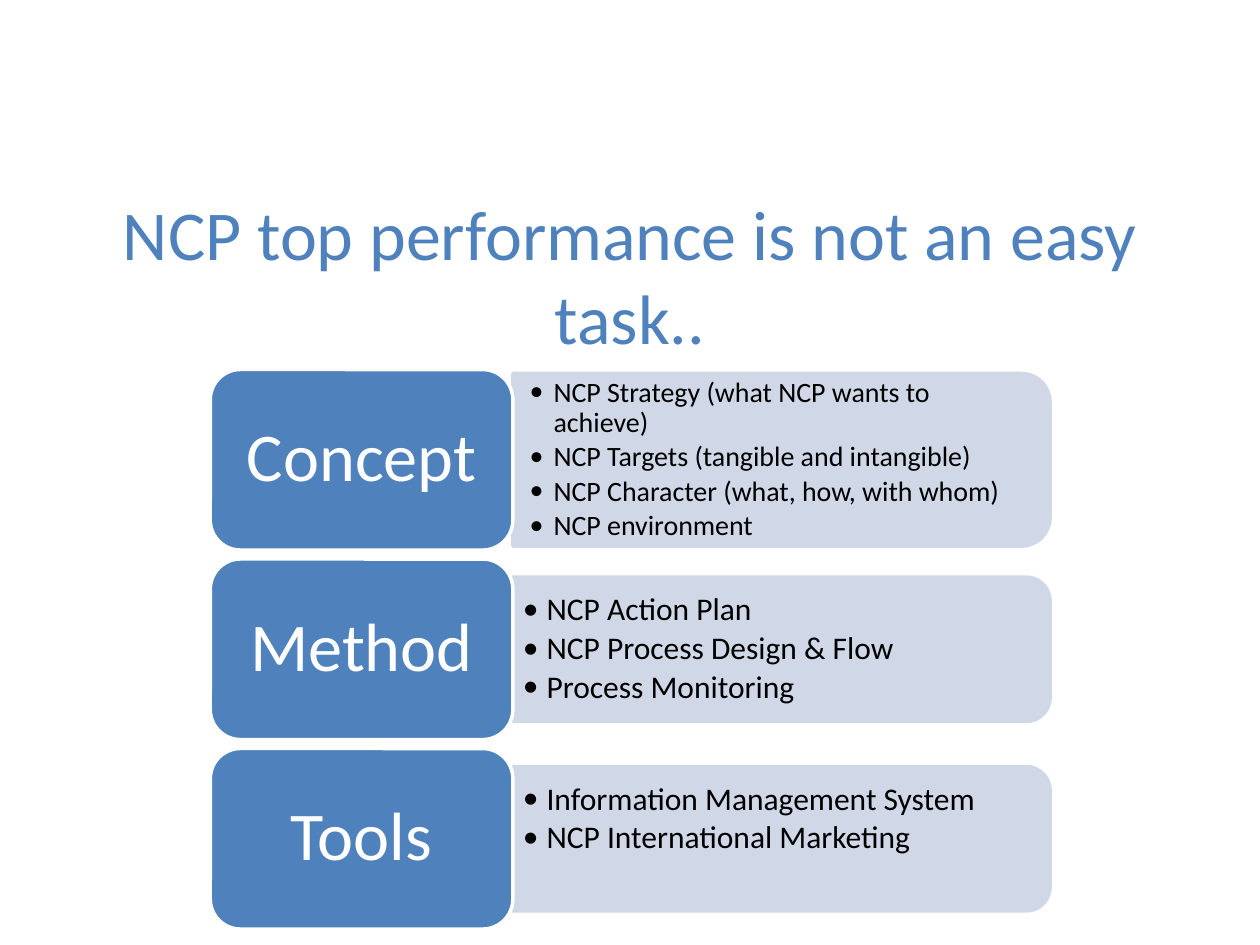
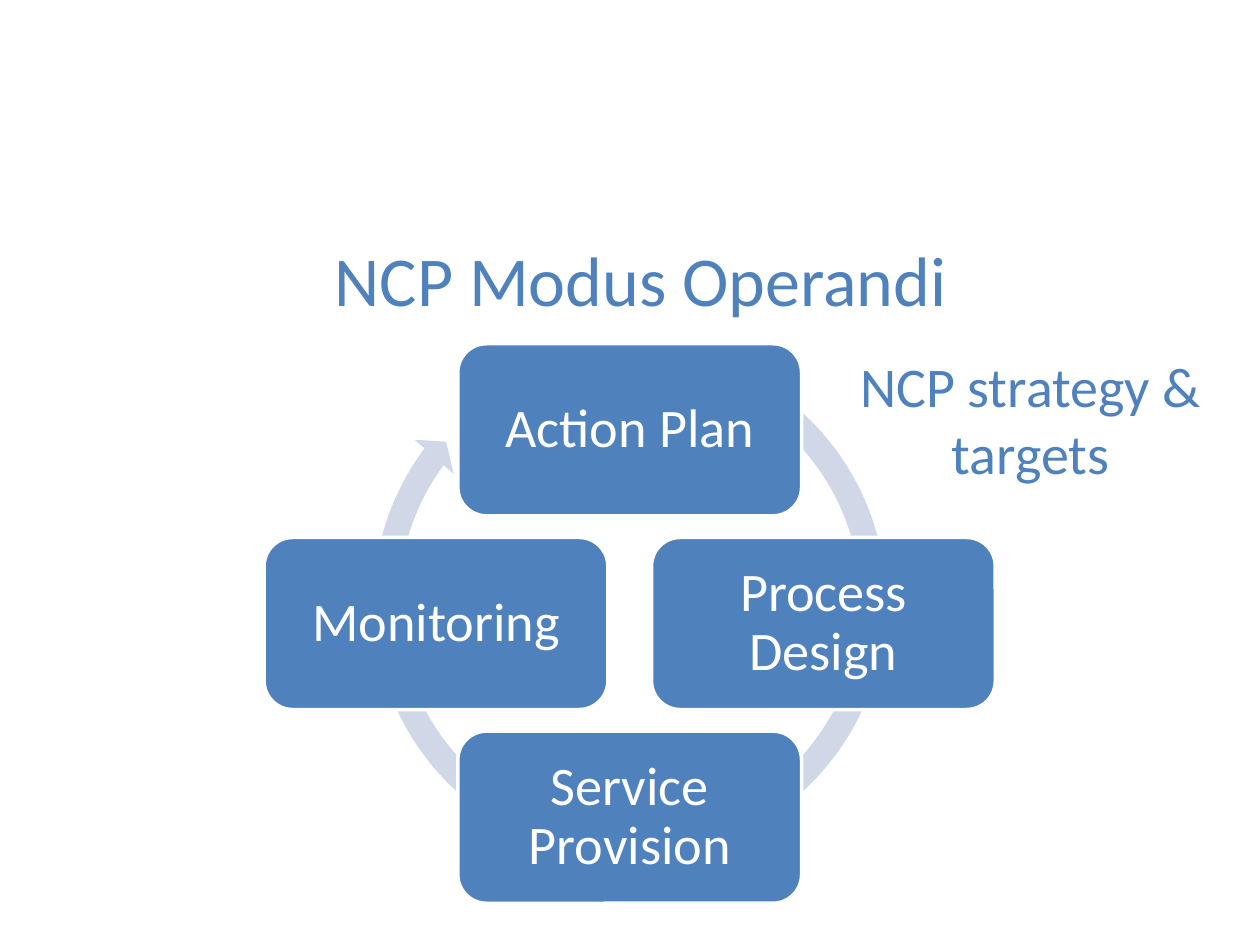
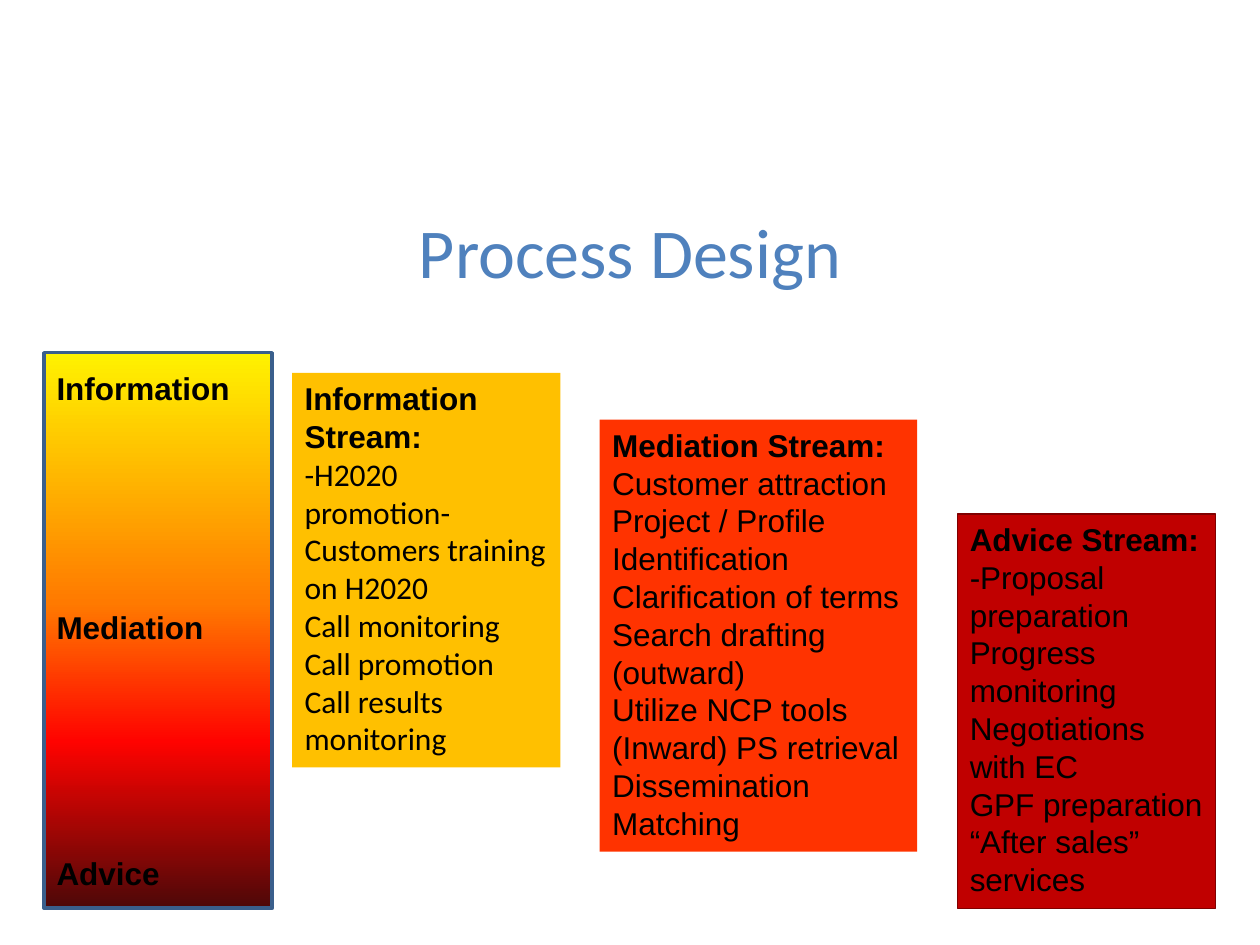
from math import cos, radians, sin

from lxml.etree import SubElement
from pptx import Presentation
from pptx.dml.color import RGBColor
from pptx.enum.shapes import MSO_SHAPE
from pptx.enum.text import MSO_ANCHOR, PP_ALIGN
from pptx.oxml.ns import qn
from pptx.util import Cm, Pt

BLUE, PALE_BLUE, WHITE, BLACK = "4F81BD", "D0D8E8", "FFFFFF", "000000"
BODY_FONT, STREAM_FONT = "Calibri", "Arial"
CORNER = 1 / 6  # corner radius as a share of the height


def rgb(hex_colour):
    return RGBColor.from_string(hex_colour)


def style_shape(shape, fill=None, line=None, line_width=2):
    shape.shadow.inherit = False
    if fill:
        shape.fill.solid()
        shape.fill.fore_color.rgb = rgb(fill)
    if line:
        shape.line.color.rgb = rgb(line)
        shape.line.width = Pt(line_width)
    else:
        shape.line.fill.background()


def set_insets(frame, left, top, right, bottom):
    frame.margin_left, frame.margin_top = Cm(left), Cm(top)
    frame.margin_right, frame.margin_bottom = Cm(right), Cm(bottom)


def style_font(font, size, colour, name=BODY_FONT, bold=False):
    font.name, font.size, font.bold = name, Pt(size), bold
    font.color.rgb = rgb(colour)


def write(shape, text, size, colour, name=BODY_FONT, bold=False,
          align=PP_ALIGN.LEFT, anchor=MSO_ANCHOR.MIDDLE):
    frame = shape.text_frame
    frame.word_wrap = True
    frame.vertical_anchor = anchor
    frame.text = text
    for paragraph in frame.paragraphs:
        paragraph.alignment = align
        for run in paragraph.runs:
            style_font(run.font, size, colour, name, bold)
    return frame


def add_heading(slide, text, box, size=40):
    heading = slide.shapes.add_textbox(*map(Cm, box))
    write(heading, text, size, BLUE, align=PP_ALIGN.CENTER)


def add_blue_box(slide, text, box, size, insets):
    blue_box = slide.shapes.add_shape(MSO_SHAPE.ROUNDED_RECTANGLE, *map(Cm, box))
    blue_box.adjustments[0] = CORNER
    style_shape(blue_box, BLUE, WHITE)
    frame = write(blue_box, text, size, WHITE, align=PP_ALIGN.CENTER)
    set_insets(frame, *insets)
    for paragraph in frame.paragraphs:
        paragraph.line_spacing = 0.9


# Concept, method and tools rows
def add_bullet_panel(slide, bullets, box, size, insets):
    left, top, width, height = box
    radius = height * CORNER
    right, bottom = left + width, top + height

    # Square left side, rounded right side
    outline = [(left, top)]
    for centre_y, first_angle in ((top + radius, -90), (bottom - radius, 0)):
        for step in range(0, 91, 6):
            angle = radians(first_angle + step)
            outline.append((right - radius + radius * cos(angle),
                            centre_y + radius * sin(angle)))
    outline.append((left, bottom))
    points = [(Cm(x), Cm(y)) for x, y in outline]
    builder = slide.shapes.build_freeform(*points[0])
    builder.add_line_segments(points[1:], close=True)
    panel = builder.convert_to_shape()
    style_shape(panel, PALE_BLUE, PALE_BLUE)

    frame = write(panel, "\n".join(bullets), size, BLACK)
    set_insets(frame, *insets)
    for paragraph in frame.paragraphs:
        paragraph.line_spacing = 0.9
        paragraph.space_after = Pt(size * 0.15)
        properties = paragraph._p.get_or_add_pPr()
        properties.set("marL", str(Cm(0.48)))
        properties.set("indent", str(-Cm(0.48)))
        SubElement(properties, qn("a:buFont"), typeface=BODY_FONT)
        SubElement(properties, qn("a:buChar"), char="•")


def add_topic_rows(slide, box, topics):
    left, top, width, height = box
    label_width, gap = 6.1, 0.18
    label_height = (height - gap * (len(topics) - 1)) / len(topics)
    for row, (label, bullets, size, panel_height, insets) in enumerate(topics):
        row_top = top + row * (label_height + gap)
        panel_top = row_top + (label_height - panel_height) / 2
        add_bullet_panel(slide, bullets,
                         (left + label_width, panel_top, width - label_width, panel_height),
                         size, insets)
        add_blue_box(slide, label, (left, row_top, label_width, label_height),
                     39, (0.25, 0.25, 0.25, 0.25))


# Cycle of steps, clockwise from the top
def add_cycle(slide, box, steps):
    left, top, width, height = box
    step_width, step_height, arrow_size = 6.93, 3.47, 10.87
    radius = (height - step_height) / 2
    centre_x, centre_y = left + width / 2, top + height / 2

    arrow = slide.shapes.add_shape(
        MSO_SHAPE.CIRCULAR_ARROW, Cm(centre_x - arrow_size / 2),
        Cm(centre_y - 0.43 - arrow_size / 2), Cm(arrow_size), Cm(arrow_size))
    band, head = 4.7 / 100, 4.8 / 100
    head_angle, end_angle, start_angle = (degrees * 0.6 for degrees in (4.55, 216.62, 298.65))
    for index, value in enumerate((band, head_angle, end_angle, start_angle, head)):
        arrow.adjustments[index] = value
    style_shape(arrow, PALE_BLUE)

    for index, step in enumerate(steps):
        angle = radians(360 * index / len(steps) - 90)
        step_left = centre_x + radius * cos(angle) - step_width / 2
        step_top = centre_y + radius * sin(angle) - step_height / 2
        add_blue_box(slide, step, (step_left, step_top, step_width, step_height),
                     31, (0.5, 0.5, 0.5, 0.5))


# Scale from information to advice
def add_service_scale(slide, box, stops, levels):
    left, top, width, height = box
    scale = slide.shapes.add_shape(MSO_SHAPE.RECTANGLE, *map(Cm, box))
    style_shape(scale, line="3A5F8C")
    scale.fill.gradient()
    scale.fill.gradient_angle = 270
    stop_list = scale._element.spPr.find(".//" + qn("a:gsLst"))
    stop_list.clear()
    for percent, colour in stops:
        stop = SubElement(stop_list, qn("a:gs"), pos=str(percent * 1000))
        SubElement(stop, qn("a:srgbClr"), val=colour)

    for level, offset in levels:
        label = slide.shapes.add_textbox(Cm(left), Cm(top + offset), Cm(width), Cm(1.02))
        write(label, level, 18, BLACK, STREAM_FONT, bold=True)


def add_stream(slide, box, heading, tasks, fill, line=None, task_font=STREAM_FONT):
    stream = slide.shapes.add_shape(MSO_SHAPE.RECTANGLE, *map(Cm, box))
    style_shape(stream, fill, line, 0.75)
    frame = write(stream, "\n".join(heading + tasks), 18, BLACK, task_font,
                  anchor=MSO_ANCHOR.TOP)
    for paragraph in frame.paragraphs[:len(heading)]:
        for run in paragraph.runs:
            style_font(run.font, 18, BLACK, STREAM_FONT, bold=True)


def build_performance(slide):
    add_heading(slide, "NCP top performance is not an easy task..", (1.27, 3.94, 22.86, 3.18))
    add_topic_rows(slide, (4.24, 7.45, 16.93, 11.28), [
        ("Concept", ["NCP Strategy (what NCP wants to achieve)",
                     "NCP Targets (tangible and intangible)",
                     "NCP Character (what, how, with whom)",
                     "NCP environment"], 16, 3.48, (0.34, 0.34, 0.51, 0.34)),
        ("Method", ["NCP Action Plan", "NCP Process Design & Flow", "Process Monitoring"],
         18, 2.91, (0.2, 0.23, 0.33, 0.23)),
        ("Tools", ["Information Management System", "NCP International Marketing"],
         18, 2.91, (0.2, 0.23, 0.33, 1.02)),
    ])


def build_modus_operandi(slide):
    add_heading(slide, "NCP strategy & targets", (16.87, 6.53, 7.82, 3.81), 32)
    add_cycle(slide, (5.33, 6.93, 14.73, 11.28),
              ["Action Plan", "Process Design", "Service Provision", "Monitoring"])
    add_heading(slide, "NCP Modus Operandi", (0.43, 4.32, 24.97, 2.59))


def build_process_design(slide):
    add_heading(slide, "Process Design", (1.27, 3.94, 22.86, 2.21))
    add_service_scale(
        slide, (0.89, 7.11, 4.6, 11.2),
        [(0, "FFF200"), (45, "FF7A00"), (70, "FF0300"), (100, "4D0808")],
        [("Information", 0.21), ("Mediation", 5.01), ("Advice", 9.98)])
    add_stream(slide, (5.89, 7.52, 5.41, 7.95), ["Information", "Stream:"],
               ["-H2020 promotion-Customers training on H2020", "Call monitoring",
                "Call promotion", "Call results monitoring"],
               "FFC000", task_font=BODY_FONT)
    add_stream(slide, (12.09, 8.46, 6.4, 8.71), ["Mediation Stream:"],
               ["Customer attraction", "Project / Profile Identification",
                "Clarification of terms", "Search drafting (outward)", "Utilize NCP tools",
                "(Inward) PS retrieval", "Dissemination", "Matching"], "FF3300")
    add_stream(slide, (19.3, 10.36, 5.21, 7.95), ["Advice Stream:"],
               ["-Proposal preparation", "Progress monitoring", "Negotiations with EC",
                "GPF preparation", "“After sales” services"], "C00000", "800000")


def main():
    deck = Presentation()
    deck.slide_width, deck.slide_height = Cm(25.4), Cm(19.05)
    blank = deck.slide_layouts[6]
    for build in (build_performance, build_modus_operandi, build_process_design):
        build(deck.slides.add_slide(blank))
    deck.save("out.pptx")


if __name__ == "__main__":
    main()
